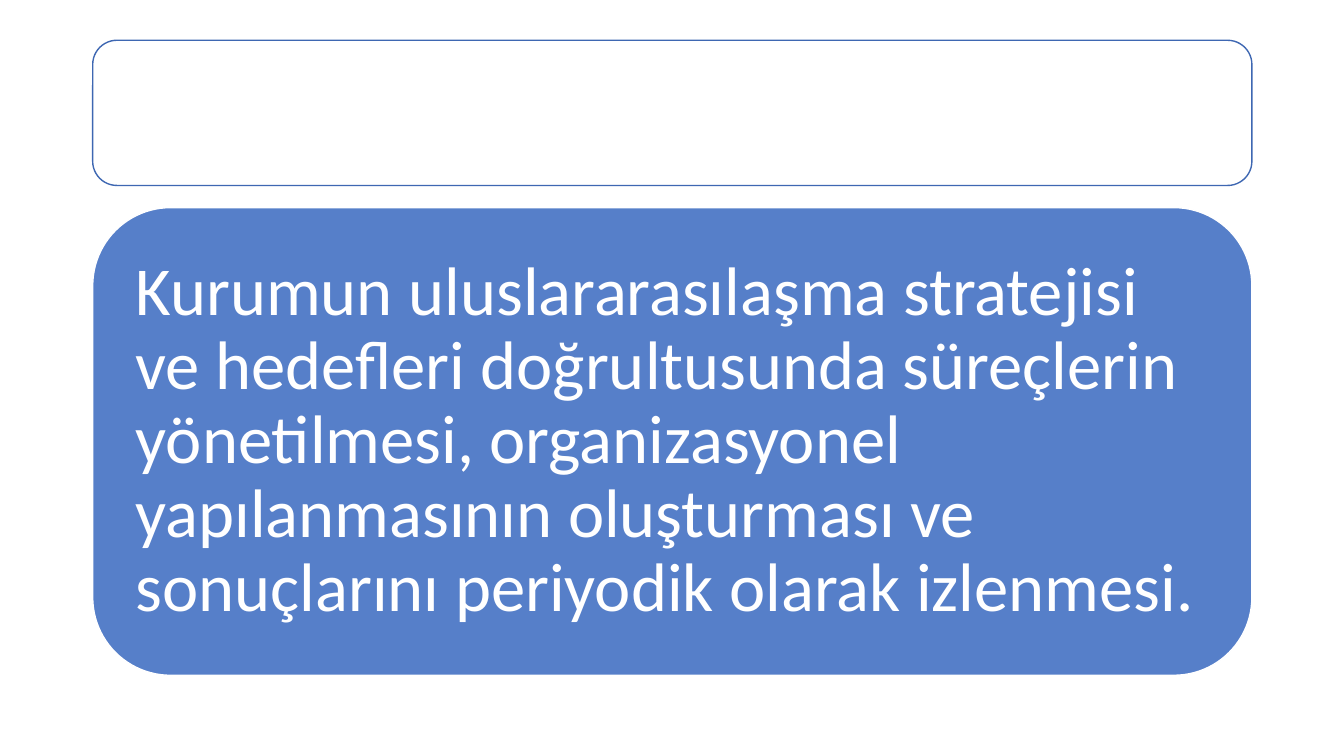
from lxml.etree import SubElement
from pptx import Presentation
from pptx.dml.color import RGBColor
from pptx.enum.shapes import MSO_SHAPE as Shape
from pptx.enum.text import MSO_ANCHOR as Anchor, PP_ALIGN as Align
from pptx.oxml.ns import qn
from pptx.util import Pt

WHITE = "FFFFFF"
BLUE = "4472C4"
OUTLINE_BLUE = "3E67B2"
LEFT, WIDTH = 66.24, 828
STATEMENT = (
    "Kurumun uluslararasılaşma stratejisi ve hedefleri doğrultusunda "
    "süreçlerin yönetilmesi, organizasyonel yapılanmasının oluşturması "
    "ve sonuçlarını periyodik olarak izlenmesi."
)


def color(hex_string):
    """Return the colour for a hex string."""
    return RGBColor.from_string(hex_string)


def add_panel(slide, box, fill, line):
    """Add a rounded panel filling the box, given in points."""
    shape = slide.shapes.add_shape(Shape.ROUNDED_RECTANGLE, *map(Pt, box))
    shape.shadow.inherit = False
    shape.fill.solid()
    shape.fill.fore_color.rgb = color(fill)
    shape.line.color.rgb = color(line)
    shape.line.width = Pt(1)
    return shape


def set_opacity(shape, percent):
    """Set the opacity of a solid shape fill."""
    fill_color = shape.fill._xPr.find(qn("a:solidFill"))[0]
    SubElement(fill_color, qn("a:alpha"), val=str(percent * 1000))


def write_text(shape, text, *, size, font, fill, inset, line_spacing):
    """Write left-aligned, vertically centred text into the shape."""
    frame = shape.text_frame
    frame.word_wrap = True
    frame.vertical_anchor = Anchor.MIDDLE
    frame.margin_left = frame.margin_right = Pt(inset)
    frame.margin_top = frame.margin_bottom = Pt(inset)
    paragraph = frame.paragraphs[0]
    paragraph.alignment = Align.LEFT
    paragraph.line_spacing = line_spacing
    run = paragraph.add_run()
    run.text = text
    run.font.size = Pt(size)
    run.font.name = font
    run.font.color.rgb = color(fill)


def add_header(slide, box):
    """Add the empty outlined header panel."""
    add_panel(slide, box, WHITE, OUTLINE_BLUE)


def add_statement(slide, box):
    """Add the blue panel with the statement."""
    panel = add_panel(slide, box, BLUE, WHITE)
    set_opacity(panel, 90)
    write_text(panel, STATEMENT, size=49, font="Calibri", fill=WHITE,
               inset=14.4, line_spacing=0.9)


def main():
    """Build and save the presentation."""
    presentation = Presentation()
    presentation.slide_width, presentation.slide_height = Pt(960), Pt(540)
    slide = presentation.slides.add_slide(presentation.slide_layouts[6])
    add_header(slide, (LEFT, 28.8, WIDTH, 103.68))
    add_statement(slide, (LEFT, 148.32, WIDTH, 334.08))
    presentation.save("out.pptx")


if __name__ == "__main__":
    main()
